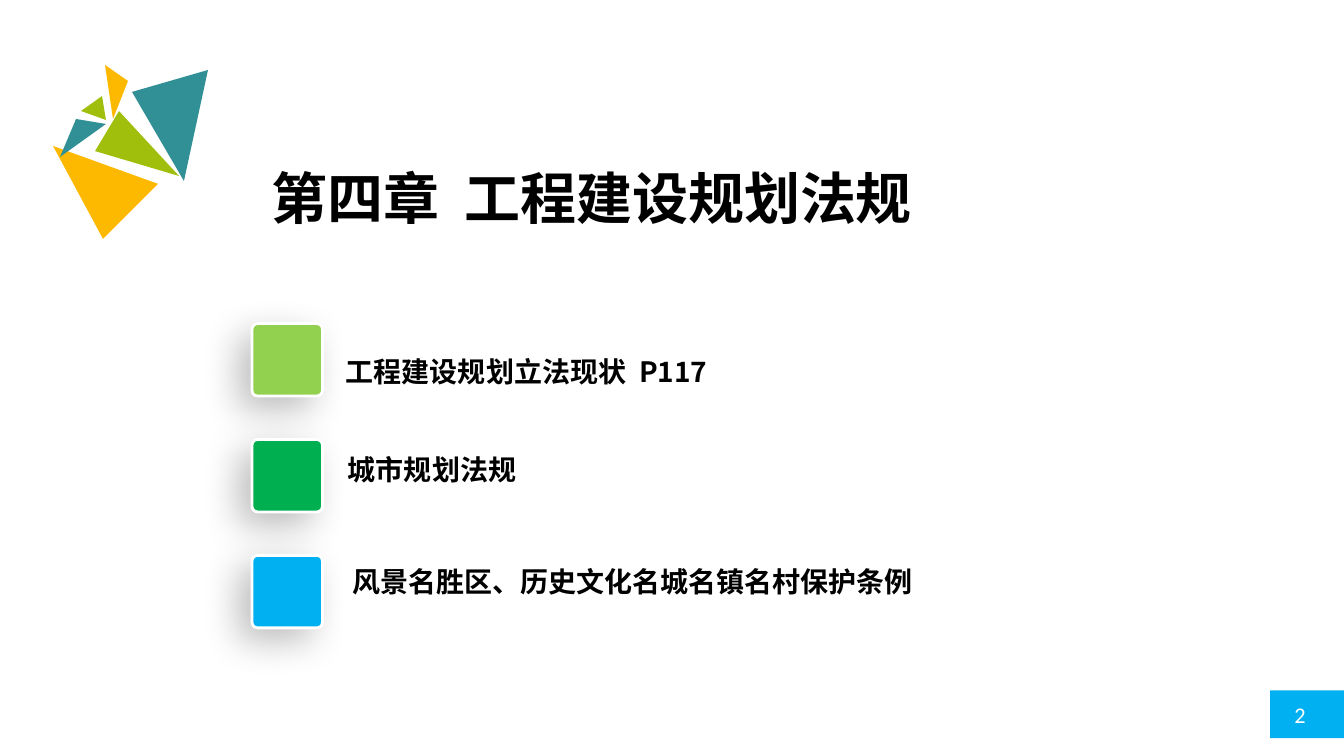
"""Build the chapter contents slide with its triangle emblem, three topics and page number."""

from dataclasses import dataclass

from lxml.etree import SubElement
from pptx import Presentation
from pptx.dml.color import RGBColor
from pptx.enum.shapes import MSO_SHAPE
from pptx.enum.text import MSO_ANCHOR, PP_ALIGN
from pptx.oxml.ns import qn
from pptx.shapes.autoshape import Shape
from pptx.slide import Slide
from pptx.util import Pt


@dataclass(frozen=True)
class Theme:
    teal: str = "319095"
    olive: str = "A0BF0D"
    amber: str = "FDB900"
    lime: str = "92D050"
    green: str = "00B050"
    blue: str = "00B0F0"
    white: str = "FFFFFF"
    black: str = "000000"
    heading_font: str = "Noto Sans CJK SC"
    number_font: str = "Calibri"
    title_size: int = 40
    topic_size: int = 20
    number_size: int = 16


@dataclass(frozen=True)
class Triangle:
    color: str
    points: tuple[tuple[float, float], ...]


@dataclass(frozen=True)
class Topic:
    text: str
    color: str
    indent: float
    space_before: float


THEME = Theme()
TRIANGLES = (
    Triangle(THEME.teal, ((148.6, 50), (131.4, 129.3), (94.3, 65.7))),
    Triangle(THEME.olive, ((85, 79.3), (127.9, 125.7), (67.9, 107.9))),
    Triangle(THEME.amber, ((37.9, 104.3), (112.9, 131.4), (73.6, 170.7))),
    Triangle(THEME.teal, ((54.3, 85), (75.7, 88.6), (42.9, 112.1))),
    Triangle(THEME.olive, ((72.9, 68.6), (75.7, 85.7), (57.9, 79.3))),
    Triangle(THEME.amber, ((75, 46.4), (91.4, 57.9), (80.7, 85))),
)
TOPICS = (
    Topic("工程建设规划立法现状  P117", THEME.lime, 0, 0),
    Topic("城市规划法规", THEME.green, 1.5, 46),
    Topic("风景名胜区、历史文化名城名镇名村保护条例", THEME.blue, 4.5, 56),
)
MARKER_LEFT, MARKER_TOP, MARKER_PITCH = 180, 231.1, 82.8
MARKER_WIDTH, MARKER_HEIGHT = 50.4, 51.8


def place(shape: Shape, left: float, top: float, width: float, height: float) -> None:
    shape.left, shape.top = Pt(left), Pt(top)
    shape.width, shape.height = Pt(width), Pt(height)


def paint(shape: Shape, color: str) -> None:
    shape.shadow.inherit = False
    shape.fill.solid()
    shape.fill.fore_color.rgb = RGBColor.from_string(color)
    shape.line.fill.background()


def style_heading(paragraph, size: int) -> None:
    font = paragraph.font
    font.name, font.size, font.bold = THEME.heading_font, Pt(size), True
    font.color.rgb = RGBColor.from_string(THEME.black)
    properties = paragraph._p.pPr.find(qn("a:defRPr"))
    SubElement(properties, qn("a:ea"), typeface=THEME.heading_font)
    paragraph.alignment = PP_ALIGN.LEFT


def add_triangle(slide: Slide, triangle: Triangle) -> None:
    start, *others = [(Pt(x), Pt(y)) for x, y in triangle.points]
    builder = slide.shapes.build_freeform(*start)
    builder.add_line_segments(others)
    paint(builder.convert_to_shape(), triangle.color)


def add_marker(slide: Slide, index: int, color: str) -> None:
    marker = slide.shapes.add_shape(
        MSO_SHAPE.ROUNDED_RECTANGLE, Pt(MARKER_LEFT), Pt(MARKER_TOP + index * MARKER_PITCH),
        Pt(MARKER_WIDTH), Pt(MARKER_HEIGHT))
    marker.adjustments[0] = 0.08
    paint(marker, color)
    marker.line.color.rgb = RGBColor.from_string(THEME.white)
    marker.line.width = Pt(2)
    effects = marker._element.spPr.find(qn("a:effectLst"))
    shadow = SubElement(effects, qn("a:outerShdw"), blurRad=str(Pt(27)), dist=str(Pt(12)),
                        dir=str(135 * 60000), algn="ctr", rotWithShape="0")
    shade = SubElement(shadow, qn("a:srgbClr"), val=THEME.black)
    SubElement(shade, qn("a:alpha"), val="26000")


def fill_title(slide: Slide) -> None:
    title = slide.shapes.title
    place(title, 186.5, 118.8, 672.5, 69.1)
    title.text_frame.text = "第四章  工程建设规划法规"
    title.text_frame.vertical_anchor = MSO_ANCHOR.TOP
    paragraph = title.text_frame.paragraphs[0]
    paragraph.line_spacing = 0.9
    style_heading(paragraph, THEME.title_size)


def fill_topics(slide: Slide) -> None:
    body = slide.placeholders[1]
    place(body, 247, 253.4, 480, 190)
    frame = body.text_frame
    frame.margin_left = frame.margin_right = frame.margin_top = frame.margin_bottom = 0
    frame.text = "\n".join(topic.text for topic in TOPICS)
    for paragraph, topic in zip(frame.paragraphs, TOPICS):
        paragraph.space_before = Pt(topic.space_before)
        properties = paragraph._p.get_or_add_pPr()
        properties.set("marL", str(Pt(topic.indent)))
        properties.set("indent", "0")
        SubElement(properties, qn("a:buNone"))
        style_heading(paragraph, THEME.topic_size)


def add_page_number(slide: Slide) -> None:
    badge = slide.shapes.add_shape(
        MSO_SHAPE.RECTANGLE, Pt(907.2), Pt(493.2), Pt(52.8), Pt(34))
    paint(badge, THEME.blue)
    frame = badge.text_frame
    frame.margin_left = Pt(17.3)
    frame.vertical_anchor = MSO_ANCHOR.MIDDLE
    frame.text = "2"
    paragraph = frame.paragraphs[0]
    paragraph.alignment = PP_ALIGN.LEFT
    paragraph.font.name, paragraph.font.size = THEME.number_font, Pt(THEME.number_size)
    paragraph.font.color.rgb = RGBColor.from_string(THEME.white)


def main() -> None:
    presentation = Presentation()
    presentation.slide_width, presentation.slide_height = Pt(960), Pt(540)
    slide = presentation.slides.add_slide(presentation.slide_layouts[1])
    add_page_number(slide)
    for triangle in TRIANGLES:
        add_triangle(slide, triangle)
    fill_title(slide)
    for index, topic in enumerate(TOPICS):
        add_marker(slide, index, topic.color)
    fill_topics(slide)
    presentation.save("out.pptx")


if __name__ == "__main__":
    main()
